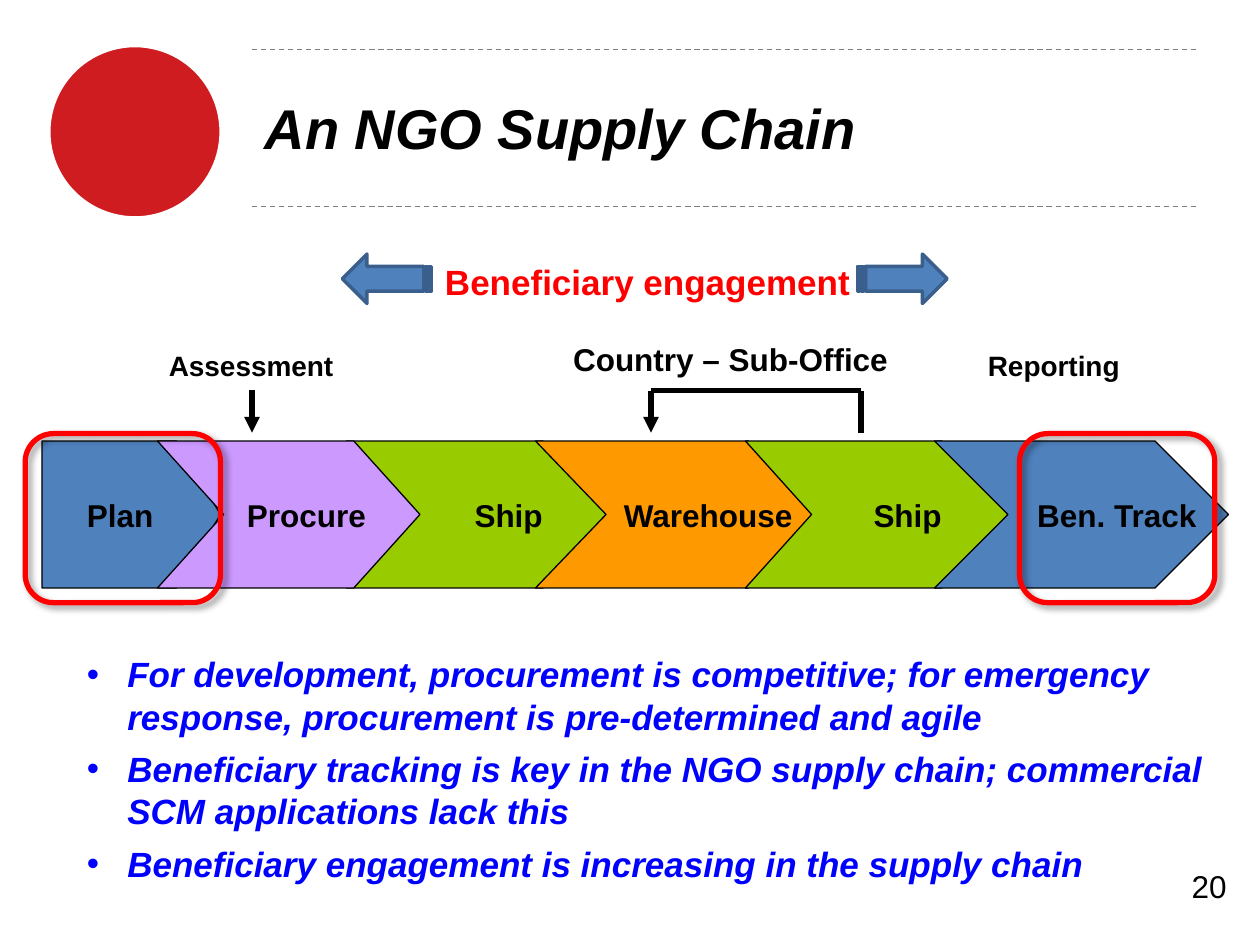
from lxml.etree import SubElement
from pptx import Presentation
from pptx.dml.color import RGBColor
from pptx.enum.dml import MSO_LINE_DASH_STYLE as Dash
from pptx.enum.shapes import MSO_CONNECTOR, MSO_SHAPE as Shape
from pptx.enum.text import MSO_ANCHOR as Anchor, PP_ALIGN as Align
from pptx.oxml.ns import qn
from pptx.util import Inches, Pt

W, H = 10, 7.5
COL, ROW = W / 120, H / 90
BLACK, WHITE, RED, BLUE, GREEN = "000000", "FFFFFF", "FF0000", "4F81BD", "99CC00"
CHAIN_TOP, CHAIN_H = 42, 14
BRACKET_TOP, BRACKET_BOTTOM = 37.2, 41.2

STAGES = [
    ("Plan", Shape.PENTAGON, 4, 17, 0.3, BLUE, 0.1),
    ("Ship", Shape.CHEVRON, 33, 25, 0.45, GREEN, 0.59),
    ("Warehouse", Shape.CHEVRON, 51, 27, 0.48, "FF9900", 0.59),
    ("Ship", Shape.CHEVRON, 71, 25, 0.45, GREEN, 0.59),
    ("Ben. Track", Shape.CHEVRON, 89, 28, 0.5, BLUE, 0.66),
    ("Procure", Shape.CHEVRON, 15, 25, 0.45, "CC99FF", 0.38),
]
POINTS = [
    "For development, procurement is competitive; for emergency response, "
    "procurement is pre-determined and agile",
    "Beneficiary tracking is key in the NGO supply chain; "
    "commercial SCM applications lack this",
    "Beneficiary engagement is increasing in the supply chain",
]


def rgb(color):
    return RGBColor.from_string(color)


def grid(*cells):
    return [Inches(n * (COL, ROW)[i % 2]) for i, n in enumerate(cells)]


def write(tf, lines, size, color=BLACK, align=Align.LEFT, **font):
    for i, line in enumerate(lines):
        p = tf.paragraphs[0] if i == 0 else tf.add_paragraph()
        p.alignment = align
        r = p.add_run()
        r.text = line
        fmt = {"name": "Arial", "size": Pt(size), "bold": True, **font}
        for key, value in fmt.items():
            setattr(r.font, key, value)
        r.font.color.rgb = rgb(color)


def add_label(s, cells, lines, size, wrap=False, **style):
    box = s.shapes.add_textbox(*grid(*cells))
    box.text_frame.word_wrap = wrap
    write(box.text_frame, lines, size, **style)
    return box


def add_figure(s, kind, cells, fill, line, width):
    sp = s.shapes.add_shape(kind, *grid(*cells))
    sp.shadow.inherit = False
    if fill:
        sp.fill.solid()
        sp.fill.fore_color.rgb = rgb(fill)
    else:
        sp.fill.background()
    sp.line.color.rgb = rgb(line)
    sp.line.width = Pt(width)
    return sp


def add_stage(s, text, kind, left, width, adj, fill, inset):
    sp = add_figure(s, kind, (left, CHAIN_TOP, width, CHAIN_H), fill, BLACK, 0.75)
    sp.adjustments[0] = adj
    tf = sp.text_frame
    fmt = {"word_wrap": False, "vertical_anchor": Anchor.MIDDLE,
           "margin_left": Inches(inset)}
    for key, value in fmt.items():
        setattr(tf, key, value)
    write(tf, [text], 18, align=Align.CENTER)


def add_line(s, cells, color=BLACK, width=3, dash=None, arrow=False):
    line = s.shapes.add_connector(MSO_CONNECTOR.STRAIGHT, *grid(*cells))
    line.line.color.rgb = rgb(color)
    line.line.width = Pt(width)
    if dash:
        line.line.dash_style = dash
    if arrow:
        SubElement(line.line._get_or_add_ln(), qn("a:tailEnd"), type="triangle")
    SubElement(line._element.spPr, qn("a:effectLst"))
    return line


def add_frame(s, left):
    sp = add_figure(s, Shape.ROUNDED_RECTANGLE, (left, 41.3, 18.6, 16.1), None, RED, 3)
    effects = sp._element.spPr.find(qn("a:effectLst"))
    shadow = SubElement(effects, qn("a:outerShdw"), blurRad=str(Pt(4)),
                        dist=str(Pt(3)), dir="2700000", rotWithShape="0")
    color = SubElement(shadow, qn("a:srgbClr"), val=BLACK)
    SubElement(color, qn("a:alpha"), val="40000")


def add_header(s):
    add_figure(s, Shape.OVAL, (4.6, 4.3, 16.5, 16.5), "CF1C21", WHITE, 2.5)
    for row in (4.7, 19.7):
        add_line(s, (24, row, 114, row), "808080", 0.75, Dash.DASH)
    title = s.shapes.title
    title.left, title.top, title.width, title.height = grid(24, 4.6, 90, 15)
    title.text_frame.vertical_anchor = Anchor.MIDDLE
    write(title.text_frame, ["An NGO Supply Chain"], 32, italic=True)


def add_engagement(s):
    add_label(s, (41.2, 24.2, 41.3, 5.3), ["Beneficiary engagement"], 20, color=RED)
    for left, turn in ((81.7, 0), (32.6, 180)):
        arrow = add_figure(s, Shape.STRIPED_RIGHT_ARROW, (left, 24.2, 8.5, 4.7),
                           BLUE, "3A5F8C", 2)
        arrow.rotation = turn


def add_callouts(s):
    add_label(s, (53.4, 31.8, 32.8, 4.8), ["Country – Sub-Office"], 18)
    add_line(s, (82, BRACKET_BOTTOM, 82, BRACKET_TOP))
    add_line(s, (82, BRACKET_TOP, 62, BRACKET_TOP))
    add_line(s, (62, BRACKET_TOP, 62, BRACKET_BOTTOM), arrow=True)
    assessment = add_label(s, (14.9, 32.6, 18.2, 4.5), ["Assessment"], 16)
    down = add_line(s, (24, BRACKET_TOP, 24, BRACKET_BOTTOM), arrow=True)
    down.begin_connect(assessment, 2)
    add_label(s, (92.9, 32.6, 15, 4.5), ["Reporting"], 16)


def add_bullets(s):
    box = add_label(s, (7.1, 61.6, 110.3, 27.8), POINTS, 20, True,
                    color="0000FF", italic=True)
    indent = Inches(0.32)
    for p in box.text_frame.paragraphs:
        p.space_before = Pt(6)
        pPr = p._p.get_or_add_pPr()
        pPr.set("marL", str(indent))
        pPr.set("indent", str(-indent))
        SubElement(pPr, qn("a:buFont"), typeface="Arial")
        SubElement(pPr, qn("a:buChar"), char="•")


def main():
    prs = Presentation()
    prs.slide_width, prs.slide_height = Inches(W), Inches(H)
    s = prs.slides.add_slide(prs.slide_layouts[5])
    add_header(s)
    for stage in STAGES:
        add_stage(s, *stage)
    add_callouts(s)
    add_bullets(s)
    add_engagement(s)
    add_label(s, (102, 82, 16, 6.2), ["20"], 18, True, align=Align.RIGHT, bold=False)
    for left in (2.4, 97.1):
        add_frame(s, left)
    prs.save("out.pptx")


if __name__ == "__main__":
    main()
